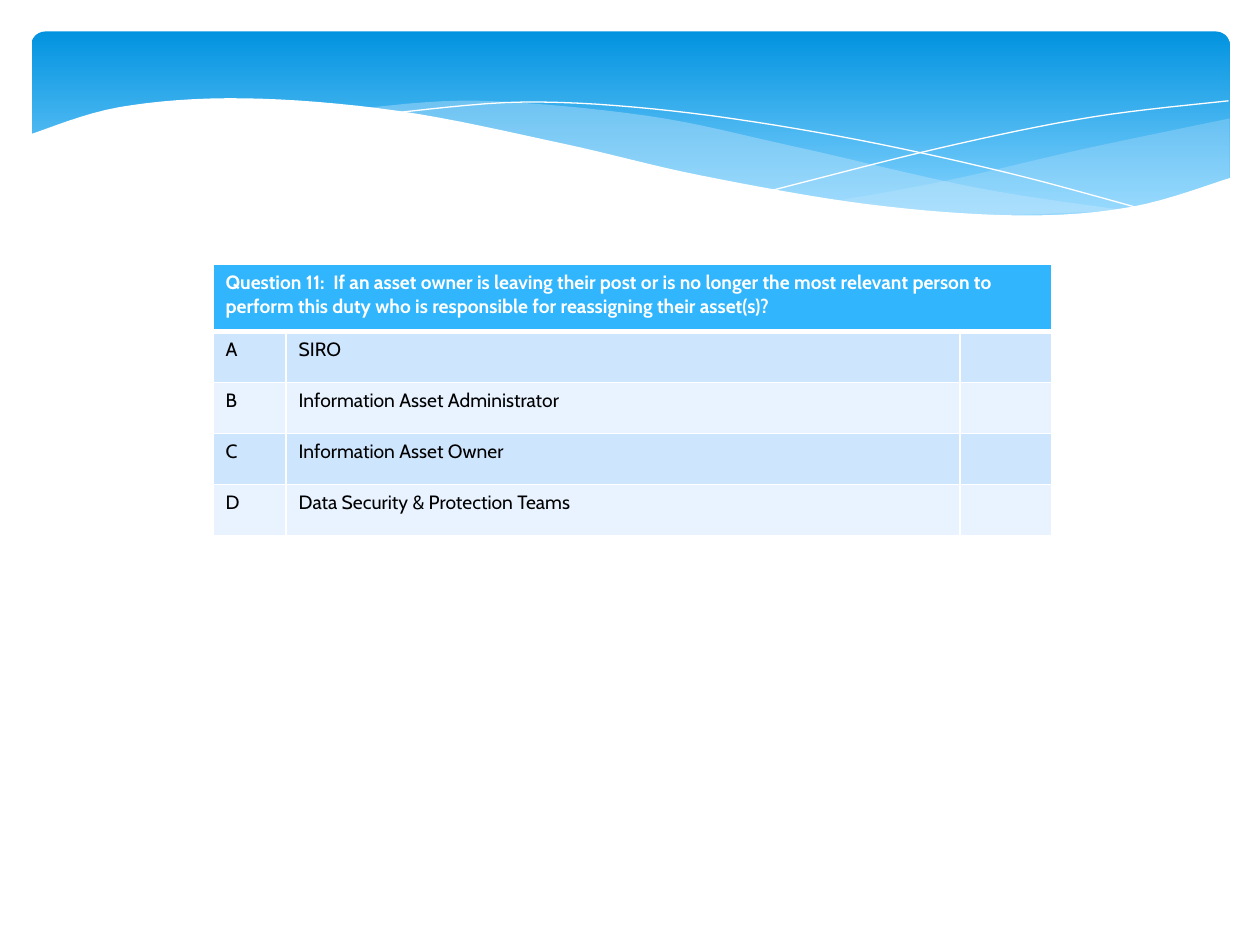
"""Build a quiz slide with a wave banner and a question table."""
from dataclasses import dataclass

from lxml import etree
from pptx import Presentation
from pptx import util as u
from pptx.dml.color import RGBColor
from pptx.enum import shapes
from pptx.oxml import ns

Points = list[tuple[float, float]]
FONT = "Cabin"
WHITE = "FFFFFF"
PALE = "C6E7FC"
BANDS = ("CEE5FE", "E8F3FF")
QUESTION = ("Question 11:  If an asset owner is leaving their post or is no longer the most "
            "relevant person to perform this duty who is responsible for reassigning their asset(s)?")
ANSWERS = ("SIRO", "Information Asset Administrator", "Information Asset Owner",
           "Data Security & Protection Teams")
COLUMNS = (0.58, 5.35, 0.73)
TABLE_HEIGHT, HEADER_HEIGHT = 2.15, 0.53


@dataclass
class Wave:
    """Curves joined at corners into one outline."""
    curves: list[Points]
    fill: str | None = None
    alpha: int = 100


WAVES = [
    Wave([[(9.76, 0.94), (8.61, 1.18), (7.53, 1.43), (6.61, 1.6)],
          [(6.61, 1.6), (7.45, 1.69), (8.35, 1.72), (9.13, 1.62), (9.76, 1.41)]], PALE, 29),
    Wave([[(8.93, 1.67), (7.75, 1.49), (6.29, 1.16), (5.14, 0.92), (3.8, 0.8), (2.86, 0.86)],
          [(2.86, 0.86), (4.49, 1.16), (6.01, 1.5), (7.48, 1.7), (8.93, 1.67)]], PALE, 40),
    Wave([[(3.09, 0.9), (4.16, 0.81), (5.33, 0.88), (6.65, 1.08), (7.95, 1.36), (9.07, 1.66)]]),
    Wave([[(6.13, 1.51), (7.48, 1.17), (8.66, 0.93), (9.75, 0.8)]]),
    Wave([[(9.77, 1.41), (8.99, 1.64), (8.09, 1.71), (6.88, 1.62), (5.55, 1.39), (4.47, 1.14),
           (3.16, 0.88), (1.93, 0.78), (0.95, 0.85), (0.23, 1.07)],
          [(0.23, 2.24), (9.77, 2.24)]], WHITE),
]


def rgb(color: str) -> RGBColor:
    return RGBColor.from_string(color)


def smooth(points: Points, steps: int = 8) -> Points:
    """Return a Catmull-Rom curve through the points."""
    if len(points) < 3:
        return points
    padded = [points[0], *points, points[-1]]
    curve = [points[0]]
    for a, b, c, d in zip(padded, padded[1:], padded[2:], padded[3:]):
        for step in range(1, steps + 1):
            t = step / steps
            x, y = (q + t * ((r - p) + t * ((2 * p - 5 * q + 4 * r - w)
                                            + t * (3 * q - p - 3 * r + w))) / 2
                    for p, q, r, w in zip(a, b, c, d))
            curve.append((x, y))
    return curve


def add_banner(s) -> None:
    sp = s.shapes.add_shape(shapes.MSO_SHAPE.ROUNDED_RECTANGLE, u.Inches(0.25), u.Inches(0.25),
                            u.Inches(9.51), u.Inches(1.56))
    sp.adjustments[0] = 0.07
    sp.shadow.inherit = False
    sp.line.fill.background()
    sp.fill.gradient()
    sp.fill.gradient_angle = 270
    for stop, color, position in zip(sp.fill.gradient_stops, ("0293E0", "83D3FE"), (0, 0.9)):
        stop.color.rgb = rgb(color)
        stop.position = position


def add_wave(s, wave: Wave) -> None:
    start, *rest = [(u.Inches(x), u.Inches(y)) for curve in wave.curves for x, y in smooth(curve)]
    builder = s.shapes.build_freeform(*start)
    builder.add_line_segments(rest, close=wave.fill is not None)
    sp = builder.convert_to_shape()
    sp.shadow.inherit = False
    if wave.fill:
        sp.fill.solid()
        sp.fill.fore_color.rgb = rgb(wave.fill)
        sp.line.fill.background()
    else:
        sp.fill.background()
        sp.line.color.rgb = rgb(WHITE)
        sp.line.width = u.Pt(0)
    if wave.alpha < 100:
        color = sp._element.spPr.find(".//" + ns.qn("a:srgbClr"))
        etree.SubElement(color, ns.qn("a:alpha"), val=str(wave.alpha * 1000))


def set_borders(cell, **widths: float) -> None:
    tc_pr = cell._tc.get_or_add_tcPr()
    for side in "LRTB":
        width = u.Pt(widths.get(side, 1))
        ln = etree.SubElement(tc_pr, ns.qn(f"a:ln{side}"), w=str(int(width)))
        solid = etree.SubElement(ln, ns.qn("a:solidFill"))
        etree.SubElement(solid, ns.qn("a:srgbClr"), val=WHITE)


def write(tf, content: str, *, size: float = 11, color: str = "000000", bold: bool = False) -> None:
    p = tf.paragraphs[0]
    r = p.add_run()
    r.text = content
    r.font.name, r.font.size, r.font.bold = FONT, u.Pt(size), bold
    r.font.color.rgb = rgb(color)


def add_question_table(s) -> None:
    table = s.shapes.add_table(len(ANSWERS) + 1, len(COLUMNS), u.Inches(1.69), u.Inches(2.1),
                               u.Inches(sum(COLUMNS)), u.Inches(TABLE_HEIGHT)).table
    for column, width in zip(table.columns, COLUMNS):
        column.width = u.Inches(width)
    answer_height = (TABLE_HEIGHT - HEADER_HEIGHT) / len(ANSWERS)
    for i, row in enumerate(table.rows):
        row.height = u.Inches(answer_height if i else HEADER_HEIGHT)
        for cell in row.cells:
            set_borders(cell, T=3 if i == 1 else 1, B=1 if i else 3)
            cell.fill.solid()
            cell.fill.fore_color.rgb = rgb(BANDS[(i - 1) % 2] if i else "31B6FD")
    table.cell(0, 0).merge(table.cell(0, len(COLUMNS) - 1))
    write(table.cell(0, 0).text_frame, QUESTION, color=WHITE, bold=True)
    for i, (letter, answer) in enumerate(zip("ABCD", ANSWERS), start=1):
        write(table.cell(i, 0).text_frame, letter)
        write(table.cell(i, 1).text_frame, answer)


def main() -> None:
    prs = Presentation()
    prs.slide_width, prs.slide_height = u.Inches(10), u.Inches(7.5)
    s = prs.slides.add_slide(prs.slide_layouts[6])
    add_banner(s)
    for wave in WAVES:
        add_wave(s, wave)
    add_question_table(s)
    prs.save("out.pptx")


if __name__ == "__main__":
    main()
